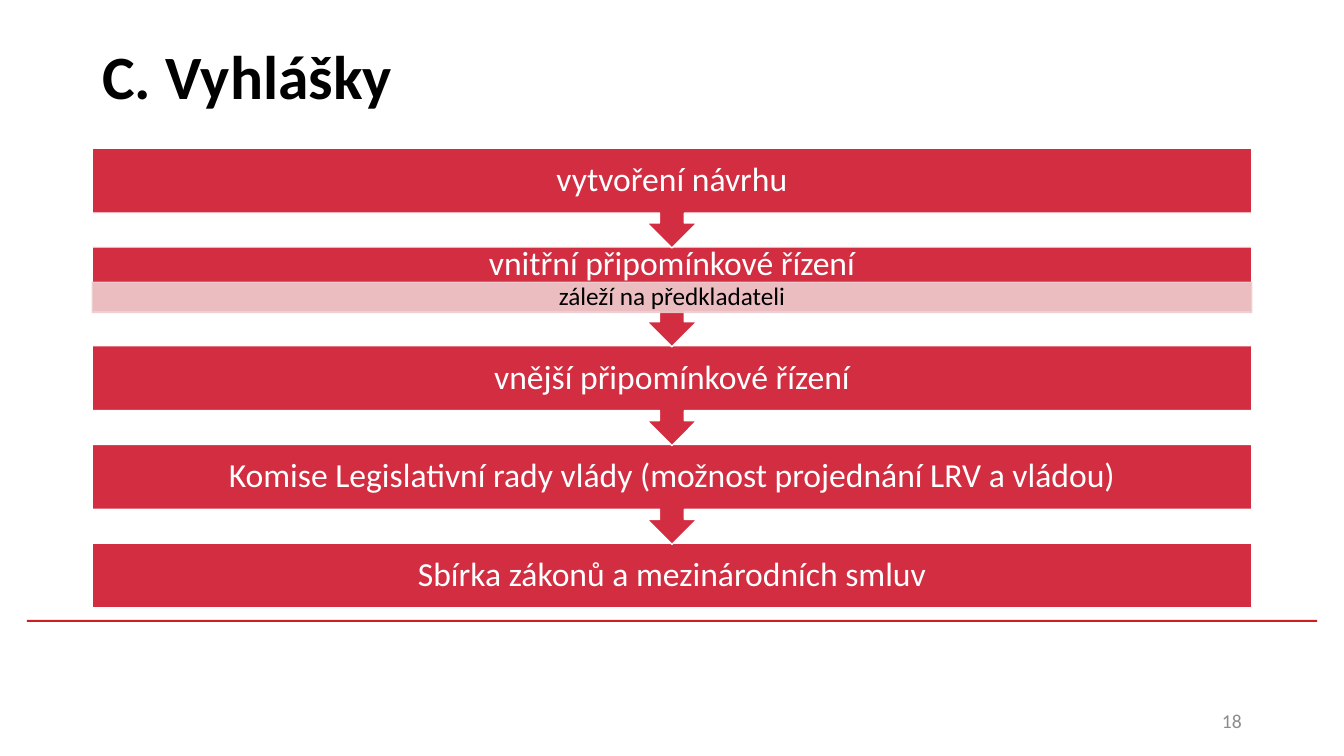
from dataclasses import dataclass

from lxml import etree
from pptx import Presentation
from pptx.dml.color import RGBColor
from pptx.enum.shapes import MSO_SHAPE
from pptx.enum.text import MSO_ANCHOR, PP_ALIGN
from pptx.oxml.ns import qn
from pptx.util import Inches, Pt

RECTANGLE = MSO_SHAPE.RECTANGLE
CALLOUT = MSO_SHAPE.DOWN_ARROW_CALLOUT
MIDDLE = MSO_ANCHOR.MIDDLE
LEFT, CENTER, RIGHT = PP_ALIGN.LEFT, PP_ALIGN.CENTER, PP_ALIGN.RIGHT


@dataclass(frozen=True)
class Theme:
    font: str = "Calibri"
    red: str = "D22D40"
    pale: str = "EECDCF"
    rule: str = "CD1F21"
    white: str = "FFFFFF"
    black: str = "000000"
    gray: str = "8C8C8C"
    title_size: int = 44
    step_size: int = 24
    note_size: int = 18
    number_size: int = 14


theme = Theme()


def write(holder, text, size, color, align=CENTER, bold=False, spacing=None, insets=(0.1, 0.05, 0.1, 0.05)):
    frame = holder.text_frame
    frame.word_wrap = True
    frame.vertical_anchor = MIDDLE
    frame.margin_left, frame.margin_top, frame.margin_right, frame.margin_bottom = map(Inches, insets)
    paragraph = frame.paragraphs[0]
    paragraph.text = text
    paragraph.alignment = align
    paragraph.line_spacing = spacing
    font = paragraph.runs[0].font
    font.name = theme.font
    font.size = Pt(size)
    font.bold = bold
    font.color.rgb = RGBColor.from_string(color)


def block(shapes, kind, left, top, width, height, fill, line=None):
    shape = shapes.add_shape(kind, Inches(left), Inches(top), Inches(width), Inches(height))
    shape.shadow.inherit = False
    shape.fill.solid()
    shape.fill.fore_color.rgb = RGBColor.from_string(fill)
    if line:
        shape.line.color.rgb = RGBColor.from_string(line)
        shape.line.width = Pt(1)
    else:
        shape.line.fill.background()
    return shape


slide_width, slide_height = 13.33, 7.5
content_width = 11.5
margin = (slide_width - content_width) / 2
steps_top = 1.47
step_pitch = 0.98
callout_height = 0.99
body_height = 0.64
note_offset, note_height = 0.35, 0.3

deck = Presentation()
deck.slide_width = Inches(slide_width)
deck.slide_height = Inches(slide_height)
slide = deck.slides.add_slide(deck.slide_layouts[5])
shapes = slide.shapes

block(shapes, RECTANGLE, 0.02 * slide_width, 0.82 * slide_height, 0.96 * slide_width, 0.02, theme.rule)

title = shapes.title
title.left, title.top = Inches(margin), Inches(0.02)
title.width, title.height = Inches(content_width), Inches(steps_top - 0.02)
write(title, "C. Vyhlášky", theme.title_size, theme.black, align=LEFT, bold=True)

number_width = 3
page_number = shapes.add_textbox(
    Inches(margin + content_width - number_width), Inches(6.95), Inches(number_width), Inches(0.4)
)
write(page_number, "18", theme.number_size, theme.gray, align=RIGHT)

steps = [
    ("vytvoření návrhu", None),
    ("vnitřní připomínkové řízení", "záleží na předkladateli"),
    ("vnější připomínkové řízení", None),
    ("Komise Legislativní rady vlády (možnost projednání LRV a vládou)", None),
    ("Sbírka zákonů a mezinárodních smluv", None),
]

for row, (step, note) in reversed(list(enumerate(steps))):
    top = steps_top + row * step_pitch
    is_last = row == len(steps) - 1
    kind, height = (RECTANGLE, body_height) if is_last else (CALLOUT, callout_height)
    step_box = block(shapes, kind, margin, top, content_width, height, theme.red, theme.white)
    bottom_inset = body_height - note_offset if note else 0
    write(step_box, step, theme.step_size, theme.white, spacing=0.9, insets=(0.19, 0, 0.19, bottom_inset))
    if note:
        note_box = block(
            shapes, RECTANGLE, margin, top + note_offset, content_width, note_height, theme.pale, theme.pale
        )
        for color in note_box._element.spPr.iter(qn("a:srgbClr")):
            etree.SubElement(color, qn("a:alpha"), val="90000")
        write(note_box, note, theme.note_size, theme.black, spacing=0.9, insets=(0.14, 0.03, 0.14, 0.03))

deck.save("out.pptx")
